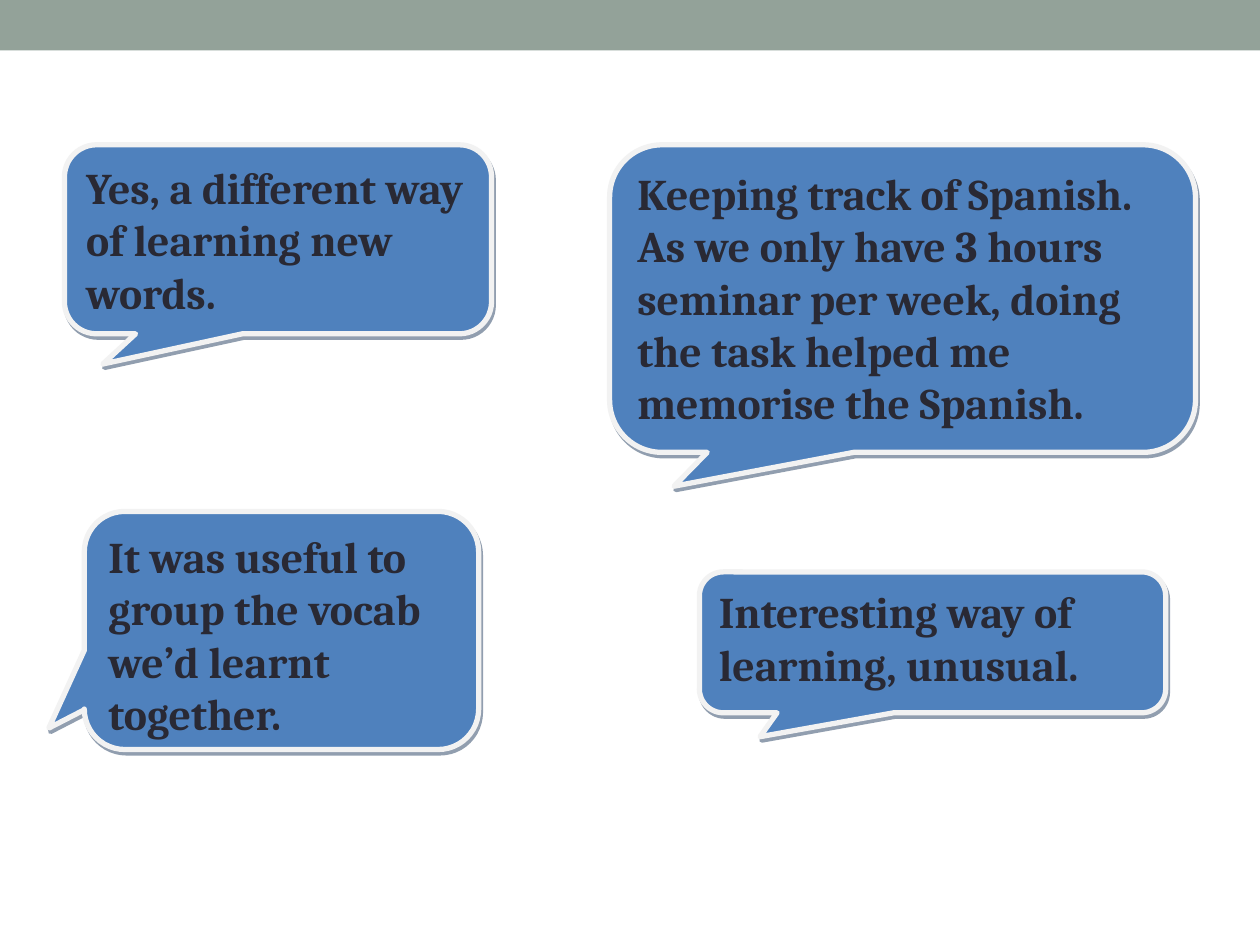
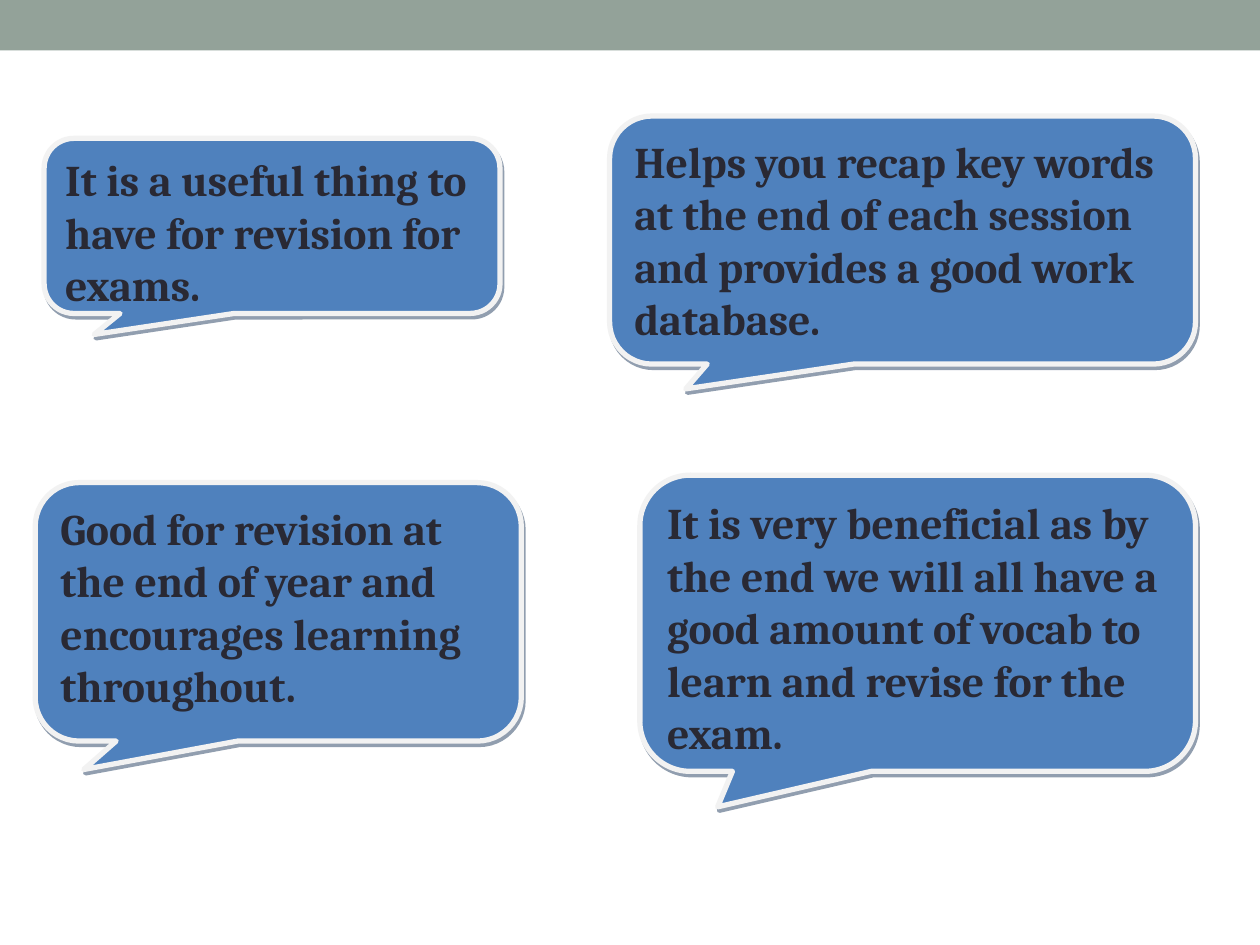
"""Build two slides of student comments in speech bubbles."""
from dataclasses import dataclass

from lxml.etree import SubElement as Sub
from pptx import Presentation
from pptx.dml.color import RGBColor as Rgb
from pptx.enum.shapes import MSO_SHAPE as Kind
from pptx.enum.text import MSO_ANCHOR as Anchor, PP_ALIGN as Align
from pptx.oxml.ns import qn
from pptx.util import Cm, Pt

# Each bubble: words, (left, top, width, height) in cm, tail tip (x, y).
SLIDES = [
    [
        ("Yes, a different way of learning new words.",
         (1.3, 2.92, 8.61, 3.81), (-0.41, 0.66)),
        ("Keeping track of Spanish. As we only have 3 hours seminar per week, "
         "doing the task helped me memorise the Spanish.",
         (12.29, 2.92, 11.81, 6.2), (-0.39, 0.61)),
        ("Interesting way of learning, unusual.",
         (14.1, 11.53, 9.4, 2.84), (-0.37, 0.67)),
        ("It was useful to group the vocab we’d learnt together.",
         (1.7, 10.31, 7.95, 4.8), (-0.59, 0.41)),
    ],
    [
        ("Helps you recap key words at the end of each session and provides "
         "a good work database.",
         (12.29, 2.34, 11.81, 5), (-0.37, 0.6)),
        ("Good for revision at the end of year and encourages learning "
         "throughout.",
         (0.71, 9.73, 9.8, 5.21), (-0.4, 0.61)),
        ("It is very beneficial as by the end we will all have a good amount "
         "of vocab to learn and revise for the exam.",
         (12.9, 9.58, 11.2, 5.97), (-0.36, 0.62)),
        ("It is a useful thing to have for revision for exams.",
         (0.89, 2.79, 9.19, 3.53), (-0.39, 0.62)),
    ],
]


@dataclass(frozen=True)
class Theme:
    band: str = "93A299"
    fill: str = "4F81BD"
    edge: str = "F2F2F2"
    shade: str = "243F60"
    ink: str = "292934"
    face: str = "Cambria"
    size: float = 25
    gap: float = 10
    rim: float = 3
    drop: float = 2.2
    turn: int = 63
    curve: float = 0.17


LOOK = Theme()
WIDE, HIGH, BAND = 25.4, 19.05, 1.02
FRAME = {"word_wrap": True, "vertical_anchor": Anchor.TOP}
PARA = {"alignment": Align.LEFT, "space_after": Pt(LOOK.gap)}
FONT = {"name": LOOK.face, "size": Pt(LOOK.size), "bold": True}


def style(item, form):
    for key, value in form.items():
        setattr(item, key, value)


def draw(slide, kind, box, fill):
    shape = slide.shapes.add_shape(kind, *map(Cm, box))
    shape.shadow.inherit = False
    shape.fill.solid()
    shape.fill.fore_color.rgb = Rgb.from_string(fill)
    return shape


def shade(shape):
    effect = shape._element.spPr.find(qn("a:effectLst"))
    drop = Sub(effect, qn("a:outerShdw"), blurRad="0",
               dist=str(Pt(LOOK.drop)), dir=str(LOOK.turn * 60000),
               algn="ctr", rotWithShape="0")
    tint = Sub(drop, qn("a:srgbClr"), val=LOOK.shade)
    Sub(tint, qn("a:alpha"), val="50000")


def bubble(slide, words, box, tip):
    shape = draw(slide, Kind.ROUNDED_RECTANGULAR_CALLOUT, box, LOOK.fill)
    for spot, value in enumerate((*tip, LOOK.curve)):
        shape.adjustments[spot] = value
    shape.line.color.rgb = Rgb.from_string(LOOK.edge)
    shape.line.width = Pt(LOOK.rim)
    shade(shape)
    frame = shape.text_frame
    frame.text = words
    para = frame.paragraphs[0]
    font = para.runs[0].font
    for item, form in ((frame, FRAME), (para, PARA), (font, FONT)):
        style(item, form)
    font.color.rgb = Rgb.from_string(LOOK.ink)


def main():
    deck = Presentation()
    style(deck, {"slide_width": Cm(WIDE), "slide_height": Cm(HIGH)})
    for quotes in SLIDES:
        slide = deck.slides.add_slide(deck.slide_layouts[6])
        band = draw(slide, Kind.RECTANGLE, (0, 0, WIDE, BAND), LOOK.band)
        band.line.fill.background()
        for quote in quotes:
            bubble(slide, *quote)
    deck.save("out.pptx")


if __name__ == "__main__":
    main()
